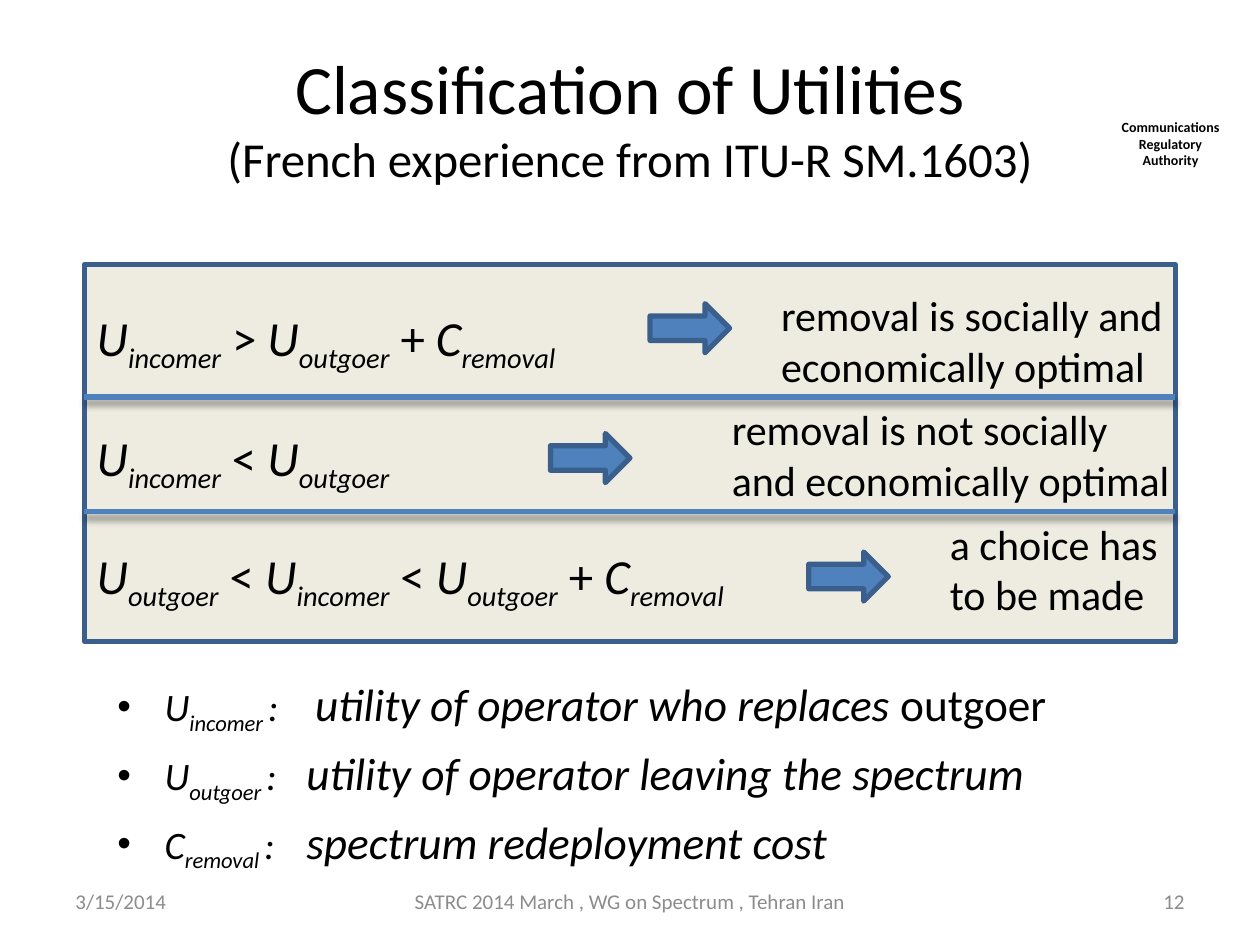
from lxml import etree
from pptx import Presentation
from pptx.dml.color import RGBColor
from pptx.enum import shapes, text
from pptx.oxml import ns
from pptx.util import Pt

BLACK = RGBColor(0x00, 0x00, 0x00)
GREY = RGBColor(0x8C, 0x8C, 0x8C)
CREAM = RGBColor(0xEE, 0xEC, 0xE1)
BLUE = RGBColor(0x4F, 0x81, 0xBD)
DARK_BLUE = RGBColor(0x3A, 0x5F, 0x8C)

TITLE = [("Classification of Utilities", 39.6),
         ("(French experience from ITU-R SM.1603)", 27.9)]
AUTHORITY = "Communications Regulatory Authority"
INCOMER, OUTGOER, REMOVAL = ("U", "incomer"), ("U", "outgoer"), ("C", "removal")

CASES = [
    {"terms": [INCOMER, " > ", OUTGOER, " + ", REMOVAL],
     "formula": (172, 317.5), "arrow": (371.5, 173.5),
     "outcome": (439.2, 162, 238.3), "lines": ["removal is socially and economically optimal"]},
    {"terms": [INCOMER, " < ", OUTGOER],
     "formula": (240.5, 232.6), "arrow": (314.6, 247.7),
     "outcome": (411.1, 227.2, 283.7),
     "lines": ["removal is not socially ", "and economically optimal"]},
    {"terms": [OUTGOER, " < ", INCOMER, " < ", OUTGOER, " + ", REMOVAL],
     "formula": (308.2, 419.8), "arrow": (462.2, 315.4),
     "outcome": (535.7, 292.5, 158.4), "lines": ["a choice has to be made"]},
]
DEFINITIONS = [
    (INCOMER, ": \t ", [("utility of operator who replaces ", True), ("outgoer", False)]),
    (OUTGOER, ": \t", [("utility of operator leaving the spectrum", True)]),
    (REMOVAL, ": \t", [("spectrum redeployment cost", True)]),
]
FOOTERS = [
    ("3/15/2014", 36, 168, text.PP_ALIGN.LEFT),
    ("SATRC 2014 March , WG on Spectrum , Tehran Iran", 224, 272, text.PP_ALIGN.CENTER),
    ("12", 516, 168, text.PP_ALIGN.RIGHT),
]
PANEL_LEFT, PANEL_TOP, PANEL_WIDTH, PANEL_HEIGHT = 48.2, 151.2, 623.5, 215.3
DIVIDERS = [226.8, 292.5]


def add_run(paragraph, words, size, color=BLACK, italic=False, bold=False, subscript=False):
    run = paragraph.add_run()
    run.text = words
    font = run.font
    font.name, font.size, font.italic, font.bold = "Calibri", Pt(size), italic, bold
    font.color.rgb = color
    if subscript:
        run._r.get_or_add_rPr().set("baseline", "-25000")


def add_lines(paragraph, lines):
    for number, (words, size) in enumerate(lines):
        if number:
            paragraph.add_line_break()
        add_run(paragraph, words, size)


def place(shape, left, top, width, height):
    shape.left, shape.top, shape.width, shape.height = map(Pt, (left, top, width, height))


def add_label(left, top, width, height, align=text.PP_ALIGN.LEFT, anchor=text.MSO_ANCHOR.TOP):
    frame = slide.shapes.add_textbox(Pt(left), Pt(top), Pt(width), Pt(height)).text_frame
    frame.word_wrap = True
    frame.vertical_anchor = anchor
    frame.paragraphs[0].alignment = align
    return frame.paragraphs[0]


def add_filled(kind, left, top, width, height, fill):
    shape = slide.shapes.add_shape(kind, Pt(left), Pt(top), Pt(width), Pt(height))
    shape.shadow.inherit = False
    shape.fill.solid()
    shape.fill.fore_color.rgb = fill
    shape.line.color.rgb = DARK_BLUE
    shape.line.width = Pt(3)


def add_divider(y):
    divider = slide.shapes.add_connector(
        shapes.MSO_CONNECTOR.STRAIGHT,
        Pt(PANEL_LEFT), Pt(y), Pt(PANEL_LEFT + PANEL_WIDTH), Pt(y))
    divider.line.color.rgb = BLUE
    divider.line.width = Pt(3)
    effects = etree.SubElement(divider._element.spPr, ns.qn("a:effectLst"))
    shadow = etree.SubElement(effects, ns.qn("a:outerShdw"), blurRad=str(Pt(4)),
                              dist=str(Pt(3)), dir="5400000", rotWithShape="0")
    black = etree.SubElement(shadow, ns.qn("a:srgbClr"), val="000000")
    etree.SubElement(black, ns.qn("a:alpha"), val="43000")


deck = Presentation()
deck.slide_width, deck.slide_height = Pt(720), Pt(540)
slide = deck.slides.add_slide(deck.slide_layouts[1])
title, definitions = slide.placeholders

authority = add_label(632.2, 64.1, 73.4, 36, text.PP_ALIGN.CENTER)
add_run(authority, AUTHORITY, 8, bold=True)
add_filled(shapes.MSO_SHAPE.RECTANGLE, PANEL_LEFT, PANEL_TOP, PANEL_WIDTH, PANEL_HEIGHT, CREAM)

place(title, 36, 21.6, 648, 90)
title.text_frame.auto_size = text.MSO_AUTO_SIZE.NONE
title.text_frame.vertical_anchor = text.MSO_ANCHOR.MIDDLE
add_lines(title.text_frame.paragraphs[0], TITLE)

place(definitions, 59.8, 383, 584, 120)
body = definitions.text_frame
body.auto_size = text.MSO_AUTO_SIZE.NONE
for number, ((symbol, index), gap, meaning) in enumerate(DEFINITIONS):
    entry = body.add_paragraph() if number else body.paragraphs[0]
    entry.space_before = Pt(5.2 if number else 0)
    add_run(entry, symbol, 22.2, italic=True)
    add_run(entry, index + " ", 22.2, italic=True, subscript=True)
    add_run(entry, gap, 22.2, italic=True)
    for words, italic in meaning:
        add_run(entry, words, 25.9, italic=italic)

for words, left, width, align in FOOTERS:
    add_run(add_label(left, 500.5, width, 28.8, align, text.MSO_ANCHOR.MIDDLE), words, 12, GREY)

for case in CASES:
    top, width = case["formula"]
    formula = add_label(PANEL_LEFT, top, width, 41.2)
    for term in case["terms"]:
        if isinstance(term, tuple):
            add_run(formula, term[0], 28, italic=True)
            add_run(formula, term[1], 28, italic=True, subscript=True)
        else:
            add_run(formula, term, 28)
    add_filled(shapes.MSO_SHAPE.RIGHT_ARROW, *case["arrow"], 45.4, 28.1, BLUE)
    outcome = add_label(*case["outcome"], 65.4)
    add_lines(outcome, [(words, 24) for words in case["lines"]])

for y in DIVIDERS:
    add_divider(y)

deck.save("out.pptx")
